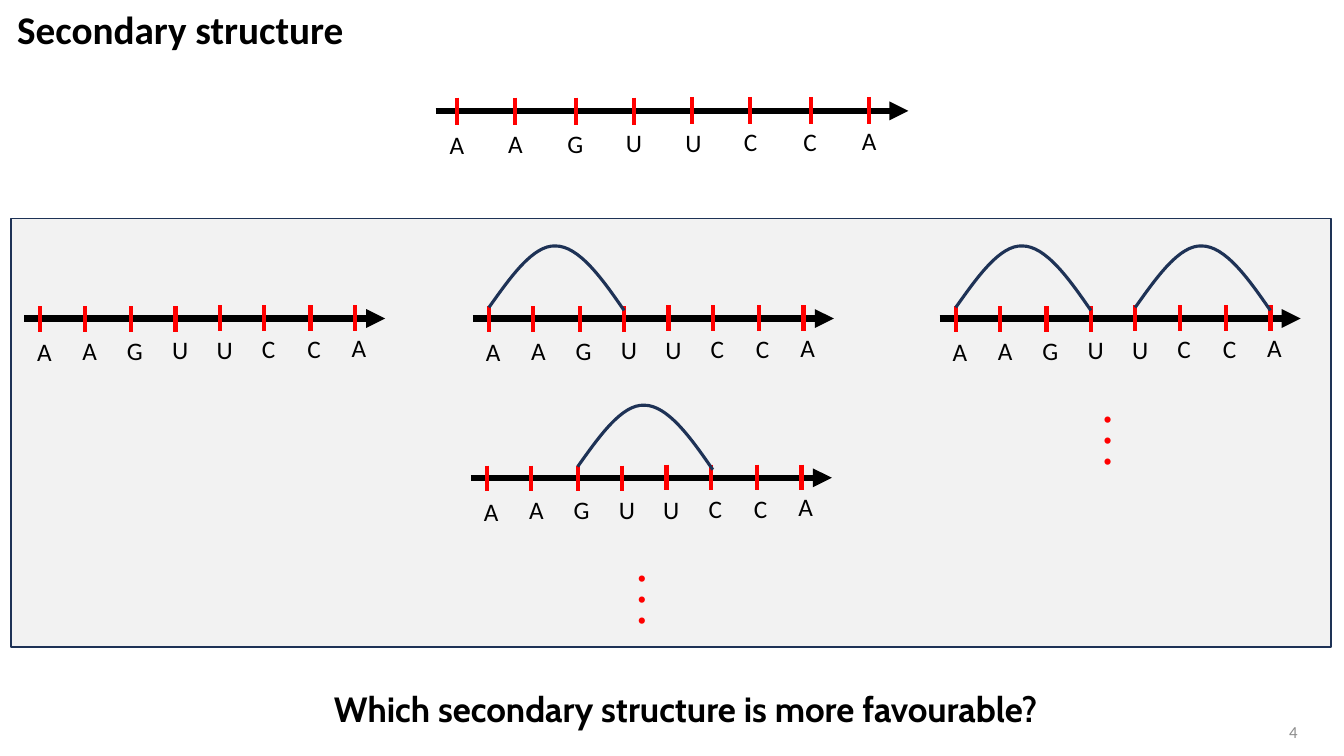
from dataclasses import dataclass
from typing import NamedTuple

from lxml import etree
from pptx import Presentation
from pptx import util as u
from pptx.dml.color import RGBColor
from pptx.enum import shapes, text
from pptx.oxml.ns import qn

PX = 9144  # EMU in one px, 100 px to the inch


@dataclass(frozen=True)
class Theme:
    black: str = "000000"
    red: str = "FF0000"
    navy: str = "1E3256"
    panel: str = "F2F2F2"
    grey: str = "8C8C8C"
    font: str = "Calibri"
    question_font: str = "Cabin"
    title_size: int = 28
    question_size: int = 25
    base_size: int = 18
    dots_size: int = 30
    number_size: int = 12
    axis_width: float = 4.5
    tick_width: float = 3
    arc_width: float = 2.25
    panel_width: float = 1


class Box(NamedTuple):
    left: int
    top: int
    width: int
    height: int


class Style(NamedTuple):
    size: int
    color: str
    bold: bool = False
    font: str = "Calibri"


@dataclass(frozen=True)
class Strand:
    start: int
    axis: int
    length: int = 358
    tick: int = 25
    letter_width: int = 27
    arcs: tuple[int, ...] = ()  # index of the tick where each arc begins

    def along(self, offset: int) -> int:
        """Place an offset measured on a strand of the usual length."""
        return self.start + round(offset * self.length / 358)


THEME = Theme()
SEQUENCE = "AAGUUCCA"
TICK_OFFSETS = (16, 60, 106, 150, 194, 238, 284, 328)
LETTER_START, LETTER_STEP, LETTER_HEIGHT = 3, 44.6, 40
ARC_RISE = 72
ARC_CURVE = ((0, 61), (22, 30), (44, -1), (66, 0), (89, 0), (112, 32), (134, 64))
STRANDS = (
    Strand(432, 110, length=469, tick=27, letter_width=35),
    Strand(24, 316),
    Strand(469, 316, arcs=(0,)),
    Strand(467, 474, arcs=(2,)),
    Strand(932, 316, arcs=(0, 4)),
)
DOTS = (Box(609, 570, 82, 61), Box(1071, 412, 82, 61))


def rgb(color: str) -> RGBColor:
    return RGBColor.from_string(color)


def emu(*lengths: int) -> list[u.Emu]:
    return [u.Emu(round(length * PX)) for length in lengths]


def write(shape, content: str, style: Style, align=text.PP_ALIGN.LEFT,
          anchor=text.MSO_ANCHOR.TOP, wrap: bool = True) -> None:
    frame = shape.text_frame
    frame.word_wrap = wrap
    frame.auto_size = text.MSO_AUTO_SIZE.NONE
    frame.vertical_anchor = anchor
    paragraph = frame.paragraphs[0]
    paragraph.alignment = align
    run = paragraph.add_run()
    run.text = content
    run.font.name = style.font
    run.font.size = u.Pt(style.size)
    run.font.bold = style.bold
    run.font.color.rgb = rgb(style.color)


def add_text(parent, box: Box, content: str, style: Style, **layout):
    shape = parent.add_textbox(*emu(*box))
    write(shape, content, style, **layout)
    return shape


def add_line(parent, ends: tuple[int, int, int, int], color: str, width: float,
             arrow: bool = False) -> None:
    line = parent.add_connector(shapes.MSO_CONNECTOR.STRAIGHT, *emu(*ends))
    line.line.color.rgb = rgb(color)
    line.line.width = u.Pt(width)
    properties = line.element.spPr
    if arrow:
        etree.SubElement(properties.find(qn("a:ln")), qn("a:tailEnd"), type="triangle")
    etree.SubElement(properties, qn("a:effectLst"))


def add_arc(parent, left: int, top: int) -> None:
    """Draw a pairing arc as two cubic curves."""
    points = [(left + x, top + y) for x, y in ARC_CURVE]
    builder = parent.build_freeform(*points[0], scale=PX)
    builder.add_line_segments(points[1:], close=False)
    arc = builder.convert_to_shape()
    segments = list(arc.element.iter(qn("a:lnTo")))
    outline = segments[0].getparent()
    for first in range(0, len(segments), 3):
        curve = etree.SubElement(outline, qn("a:cubicBezTo"))
        for segment in segments[first:first + 3]:
            curve.append(segment[0])
            outline.remove(segment)
    arc.fill.background()
    arc.line.color.rgb = rgb(THEME.navy)
    arc.line.width = u.Pt(THEME.arc_width)
    arc.shadow.inherit = False


def add_strand(slide, strand: Strand) -> None:
    group = slide.shapes.add_group_shape().shapes
    end = strand.start + strand.length
    add_line(group, (strand.start, strand.axis, end, strand.axis),
             THEME.black, THEME.axis_width, arrow=True)
    for index, offset in enumerate(TICK_OFFSETS):
        x = strand.along(offset)
        top = strand.axis - strand.tick // 2 - index // 4
        add_line(group, (x, top, x, top + strand.tick), THEME.red, THEME.tick_width)
    for index, letter in enumerate(SEQUENCE):
        box = Box(strand.along(LETTER_START + index * LETTER_STEP),
                  strand.axis + 13 - (index + 1) // 2,
                  strand.letter_width, LETTER_HEIGHT)
        label = add_text(group, box, letter, Style(THEME.base_size, THEME.black), wrap=False)
        label.text_frame.margin_right = 0
    for index in strand.arcs:
        add_arc(slide.shapes, strand.along(TICK_OFFSETS[index]), strand.axis - ARC_RISE)


def add_panel(slide, box: Box) -> None:
    panel = slide.shapes.add_shape(shapes.MSO_SHAPE.RECTANGLE, *emu(*box))
    panel.fill.solid()
    panel.fill.fore_color.rgb = rgb(THEME.panel)
    panel.line.color.rgb = rgb(THEME.navy)
    panel.line.width = u.Pt(THEME.panel_width)
    panel.shadow.inherit = False


def main() -> None:
    presentation = Presentation()
    presentation.slide_width, presentation.slide_height = emu(1333, 750)
    slide = presentation.slides.add_slide(presentation.slide_layouts[5])

    title = slide.shapes.title
    title.left, title.top, title.width, title.height = emu(7, 0, 358, 57)
    write(title, "Secondary structure", Style(THEME.title_size, THEME.black, True, THEME.font))

    add_panel(slide, Box(11, 217, 1309, 425))
    for strand in STRANDS:
        add_strand(slide, strand)
    for box in DOTS:
        dots = add_text(slide.shapes, box, ". . .",
                        Style(THEME.dots_size, THEME.red, True), wrap=False)
        dots.rotation = 90

    add_text(slide.shapes, Box(258, 677, 844, 52),
             "Which secondary structure is more favourable?",
             Style(THEME.question_size, THEME.black, True, THEME.question_font),
             align=text.PP_ALIGN.CENTER)
    add_text(slide.shapes, Box(997, 706, 300, 40), "4",
             Style(THEME.number_size, THEME.grey),
             align=text.PP_ALIGN.RIGHT, anchor=text.MSO_ANCHOR.MIDDLE)
    presentation.save("out.pptx")


if __name__ == "__main__":
    main()
